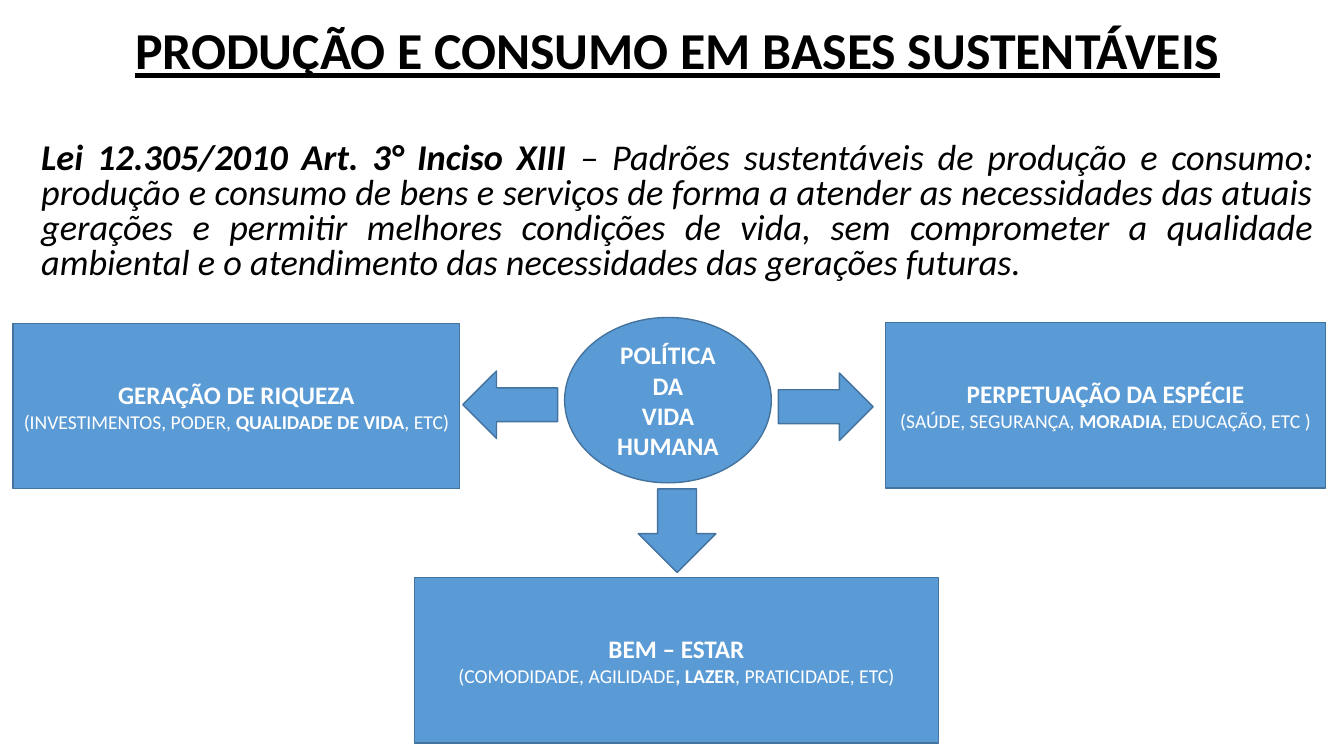
import pptx
import pptx.dml.color
import pptx.enum.shapes
import pptx.enum.text
import pptx.util

PX = 9144  # EMU per px, 100 px to the inch
COLORS = {"text": "000000", "fill": "5B9BD5", "outline": "43739E", "label": "FFFFFF"}
SHAPES = pptx.enum.shapes.MSO_SHAPE
ALIGN = pptx.enum.text.PP_ALIGN


def add_runs(paragraph, parts, size, color, align=ALIGN.CENTER):
    """Add (text, bold) parts to a paragraph as runs."""
    paragraph.alignment = align
    for text, bold in parts:
        run = paragraph.add_run()
        run.text = text
        run.font.name = "Calibri"
        run.font.size = pptx.util.Pt(size)
        run.font.bold = bold
        run.font.color.rgb = pptx.dml.color.RGBColor.from_string(COLORS[color])


def add_block(kind, left, top, width, height):
    block = slide.shapes.add_shape(kind, left * PX, top * PX, width * PX, height * PX)
    block.shadow.inherit = False
    block.fill.solid()
    block.fill.fore_color.rgb = pptx.dml.color.RGBColor.from_string(COLORS["fill"])
    block.line.color.rgb = pptx.dml.color.RGBColor.from_string(COLORS["outline"])
    block.line.width = pptx.util.Pt(1)
    return block


deck = pptx.Presentation()
deck.slide_width = 1333 * PX
deck.slide_height = 750 * PX
slide = deck.slides.add_slide(deck.slide_layouts[6])

# Title and legal definition
intro = slide.shapes.add_textbox(31 * PX, 25 * PX, 1282 * PX, 284 * PX).text_frame
intro.word_wrap = True
title = intro.paragraphs[0]
add_runs(title, [("PRODUÇÃO E CONSUMO EM BASES SUSTENTÁVEIS", True)], 37, "text")
title.runs[0].font.underline = True

law = intro.add_paragraph()
add_runs(law, [
    ("Lei 12.305/2010 Art. 3° Inciso XIII", True),
    (" – Padrões sustentáveis de produção e consumo: produção e consumo de bens e "
     "serviços de forma a atender as necessidades das atuais gerações e permitir "
     "melhores condições de vida, sem comprometer a qualidade ambiental e o "
     "atendimento das necessidades das gerações futuras.", False),
], 25.9, "text", ALIGN.JUSTIFY)
law.space_before = pptx.util.Pt(45)
for run in law.runs:
    run.font.italic = True
for paragraph in intro.paragraphs:
    paragraph.line_spacing = 0.8

# Arrows from the centre to each goal
for left, top, width, height, rotation in [
    (772, 370, 94, 67, 0),
    (630, 488, 83, 77, 90),
    (459, 368, 94, 67, 180),
]:
    add_block(SHAPES.RIGHT_ARROW, left, top, width, height).rotation = rotation

# Central policy and its three goals: each line is (size, parts)
for kind, left, top, width, lines in [
    (SHAPES.OVAL, 560, 315, 205, [
        (18, [("POLÍTICA DA", True)]),
        (18, [("VIDA HUMANA", True)])]),
    (SHAPES.RECTANGLE, 13, 321, 443, [
        (18, [("GERAÇÃO DE RIQUEZA", True)]),
        (14, [("(INVESTIMENTOS, PODER, ", False), ("QUALIDADE DE VIDA", True),
              (", ETC)", False)])]),
    (SHAPES.RECTANGLE, 878, 320, 437, [
        (18, [("PERPETUAÇÃO DA ESPÉCIE", True)]),
        (14, [("(SAÚDE, SEGURANÇA, ", False), ("MORADIA", True),
              (", EDUCAÇÃO, ETC )", False)])]),
    (SHAPES.RECTANGLE, 411, 573, 520, [
        (18, [("BEM – ESTAR", True)]),
        (14, [("(COMODIDADE, AGILIDADE", False), (", LAZER", True),
              (", PRATICIDADE, ETC)", False)])]),
]:
    label = add_block(kind, left, top, width, 164).text_frame
    label.word_wrap = True
    label.vertical_anchor = pptx.enum.text.MSO_ANCHOR.MIDDLE
    for index, (size, parts) in enumerate(lines):
        paragraph = label.add_paragraph() if index else label.paragraphs[0]
        add_runs(paragraph, parts, size, "label")

deck.save("out.pptx")
